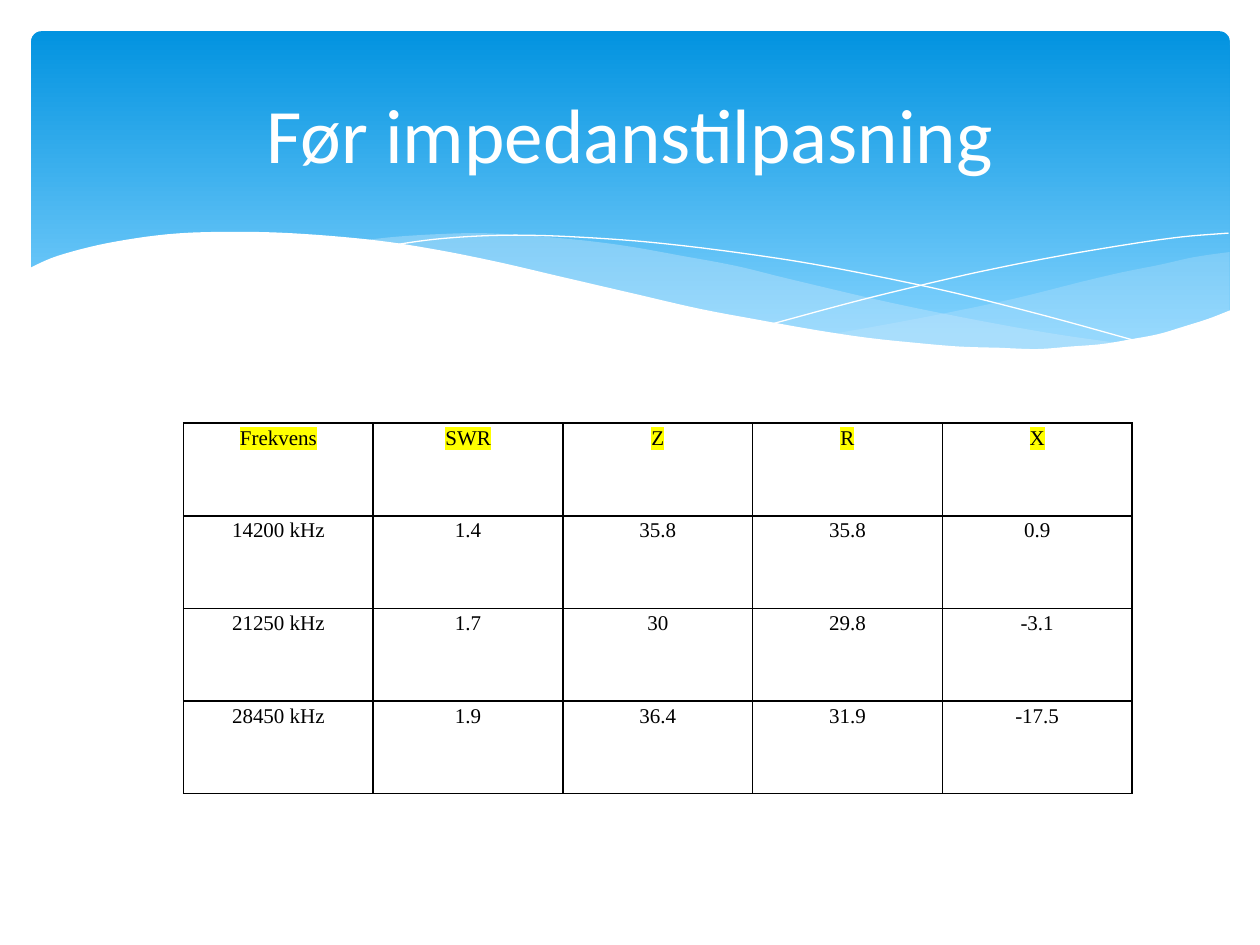
from dataclasses import dataclass

from lxml.etree import SubElement
from pptx import Presentation
from pptx.dml.color import RGBColor as RGB
from pptx.enum.shapes import MSO_SHAPE as Shape
from pptx.enum.text import MSO_ANCHOR as Anchor, PP_ALIGN as Align
from pptx.oxml.ns import qn
from pptx.util import Cm, Pt


@dataclass(frozen=True)
class Theme:
    sky_top: RGB = RGB.from_string("0293E0")
    sky_bottom: RGB = RGB.from_string("83D3FE")
    mist: RGB = RGB.from_string("C6E7FC")
    white: RGB = RGB.from_string("FFFFFF")
    ink: RGB = RGB.from_string("000000")
    marker: RGB = RGB.from_string("FFFF00")
    title_font: str = "Calibri"
    table_font: str = "Times New Roman"
    title_size: Pt = Pt(44)
    table_size: Pt = Pt(12)
    hairline: Pt = Pt(0)
    border: Pt = Pt(1)


UNITS_PER_HUNDREDTH_INCH = 25.4

BACK_WAVE = [
    [(976, 200), (948, 204), (921, 210), (891, 216), (861, 223),
     (805, 237), (753, 248), (706, 257), (661, 265)],
    [(661, 265), (691, 269), (732, 274), (769, 277), (803, 278), (835, 277),
     (863, 275), (889, 272), (913, 267), (935, 262), (956, 255), (976, 247)],
]
MIDDLE_WAVE = [
    [(893, 273), (837, 265), (775, 254), (706, 240), (629, 222), (584, 211),
     (541, 203), (502, 196), (465, 191), (420, 187), (380, 185), (344, 186),
     (313, 188), (286, 191)],
    [(286, 191), (323, 196), (362, 203), (404, 211), (449, 222), (491, 232),
     (530, 240), (584, 252), (634, 261), (680, 268), (722, 274), (761, 277),
     (796, 278), (828, 278), (857, 277), (893, 273)],
]
FALLING_LINE = [
    [(309, 195), (344, 190), (387, 187), (433, 187), (489, 190), (533, 194),
     (582, 200), (636, 208), (695, 219), (760, 233), (831, 251), (907, 272)],
]
RISING_LINE = [
    [(613, 257), (672, 241), (720, 229), (776, 216), (836, 204), (895, 194),
     (938, 188), (975, 185)],
]
FRONT_WAVE = [
    [(23, 213), (46, 203), (85, 193), (132, 186), (177, 184), (230, 185),
     (292, 190), (340, 197), (391, 207), (447, 220), (503, 233), (555, 245),
     (603, 254), (648, 262), (688, 268), (726, 272), (761, 275), (793, 276),
     (823, 277), (850, 275), (875, 273), (899, 269), (920, 265), (940, 259),
     (959, 253), (977, 246)],
    [(977, 329), (23, 329)],
]

MEASUREMENTS = [
    ("Frekvens", "SWR", "Z", "R", "X"),
    ("14200 kHz", "1.4", "35.8", "35.8", "0.9"),
    ("21250 kHz", "1.7", "30", "29.8", "-3.1"),
    ("28450 kHz", "1.9", "36.4", "31.9", "-17.5"),
]


def spline(knots, steps=6):
    if len(knots) < 3:
        return knots
    padded = [knots[0], *knots, knots[-1]]
    points = [knots[0]]
    for a, b, c, d in zip(padded, padded[1:], padded[2:], padded[3:]):
        for step in range(1, steps + 1):
            t = step / steps
            points.append(tuple(
                (2 * q + (r - p) * t + (2 * p - 5 * q + 4 * r - s) * t ** 2
                 + (3 * q - p - 3 * r + s) * t ** 3) / 2
                for p, q, r, s in zip(a, b, c, d)))
    return points


class SlideBuilder:
    """Draws styled elements on the current slide."""

    def __init__(self, presentation, theme):
        self.theme = theme
        self.slide = presentation.slides.add_slide(presentation.slide_layouts[6])

    def sky(self, left, top, width, height):
        shape = self.slide.shapes.add_shape(Shape.ROUNDED_RECTANGLE, left, top, width, height)
        shape.shadow.inherit = False
        shape.adjustments[0] = 0.03
        shape.line.fill.background()
        shape.fill.gradient()
        shape.fill.gradient_angle = 270
        stops = zip(shape.fill.gradient_stops, (0, 0.9), (self.theme.sky_top, self.theme.sky_bottom))
        for stop, position, color in stops:
            stop.position = position
            stop.color.rgb = color

    def outline(self, curves, closed):
        points = [(x * UNITS_PER_HUNDREDTH_INCH, y * UNITS_PER_HUNDREDTH_INCH)
                  for curve in curves for x, y in spline(curve)]
        builder = self.slide.shapes.build_freeform(*points[0], scale=Cm(0.001))
        builder.add_line_segments(points[1:], close=closed)
        shape = builder.convert_to_shape()
        shape.shadow.inherit = False
        return shape

    def wave(self, curves, color, opacity=100):
        shape = self.outline(curves, closed=True)
        shape.line.fill.background()
        shape.fill.solid()
        shape.fill.fore_color.rgb = color
        if opacity < 100:
            color_element = shape.element.spPr.find(qn("a:solidFill"))[0]
            SubElement(color_element, qn("a:alpha"), val=str(opacity * 1000))

    def thread(self, curves):
        shape = self.outline(curves, closed=False)
        shape.fill.background()
        shape.line.color.rgb = self.theme.white
        shape.line.width = self.theme.hairline

    def text_run(self, paragraph, text, font, size, color, highlight=None):
        paragraph.alignment = Align.CENTER
        run = paragraph.add_run()
        run.text = text
        run.font.name, run.font.size = font, size
        run.font.color.rgb = color
        if highlight is not None:
            properties = run._r.get_or_add_rPr()
            marker = SubElement(properties, qn("a:highlight"))
            SubElement(marker, qn("a:srgbClr"), val=str(highlight))
            properties.find(qn("a:solidFill")).addnext(marker)

    def title(self, text, left, top, width, height):
        frame = self.slide.shapes.add_textbox(left, top, width, height).text_frame
        frame.word_wrap = True
        frame.vertical_anchor = Anchor.MIDDLE
        theme = self.theme
        self.text_run(frame.paragraphs[0], text, theme.title_font, theme.title_size, theme.white)

    def table(self, rows, left, top, width, height):
        shape = self.slide.shapes.add_table(len(rows), len(rows[0]), left, top, width, height)
        table = shape.table
        table.first_row = table.horz_banding = False
        for row_index, values in enumerate(rows):
            highlight = self.theme.marker if row_index == 0 else None
            for column_index, text in enumerate(values):
                self.cell(table.cell(row_index, column_index), text, highlight)

    def cell(self, cell, text, highlight):
        theme = self.theme
        cell.margin_left = cell.margin_right = Cm(0.18)
        cell.margin_top = cell.margin_bottom = 0
        properties = cell._tc.get_or_add_tcPr()
        for side in ("lnL", "lnR", "lnT", "lnB"):
            line = SubElement(properties, qn(f"a:{side}"), w=str(theme.border))
            fill = SubElement(line, qn("a:solidFill"))
            SubElement(fill, qn("a:srgbClr"), val=str(theme.ink))
        cell.fill.background()
        paragraph = cell.text_frame.paragraphs[0]
        paragraph.line_spacing = 1.15
        paragraph.space_after = Pt(10)
        self.text_run(paragraph, text, theme.table_font, theme.table_size, theme.ink, highlight)


def main():
    presentation = Presentation()
    presentation.slide_width, presentation.slide_height = Cm(25.4), Cm(19.05)
    theme = Theme()
    builder = SlideBuilder(presentation, theme)
    builder.sky(Cm(0.63), Cm(0.63), Cm(24.16), Cm(6.86))
    builder.wave(BACK_WAVE, theme.mist, opacity=29)
    builder.wave(MIDDLE_WAVE, theme.mist, opacity=40)
    builder.thread(FALLING_LINE)
    builder.thread(RISING_LINE)
    builder.wave(FRONT_WAVE, theme.white)
    builder.table(MEASUREMENTS, Cm(3.7), Cm(8.53), Cm(19.12), Cm(7.47))
    builder.title("Før impedanstilpasning", Cm(1.27), Cm(0.94), Cm(22.86), Cm(3.48))
    presentation.save("out.pptx")


if __name__ == "__main__":
    main()
